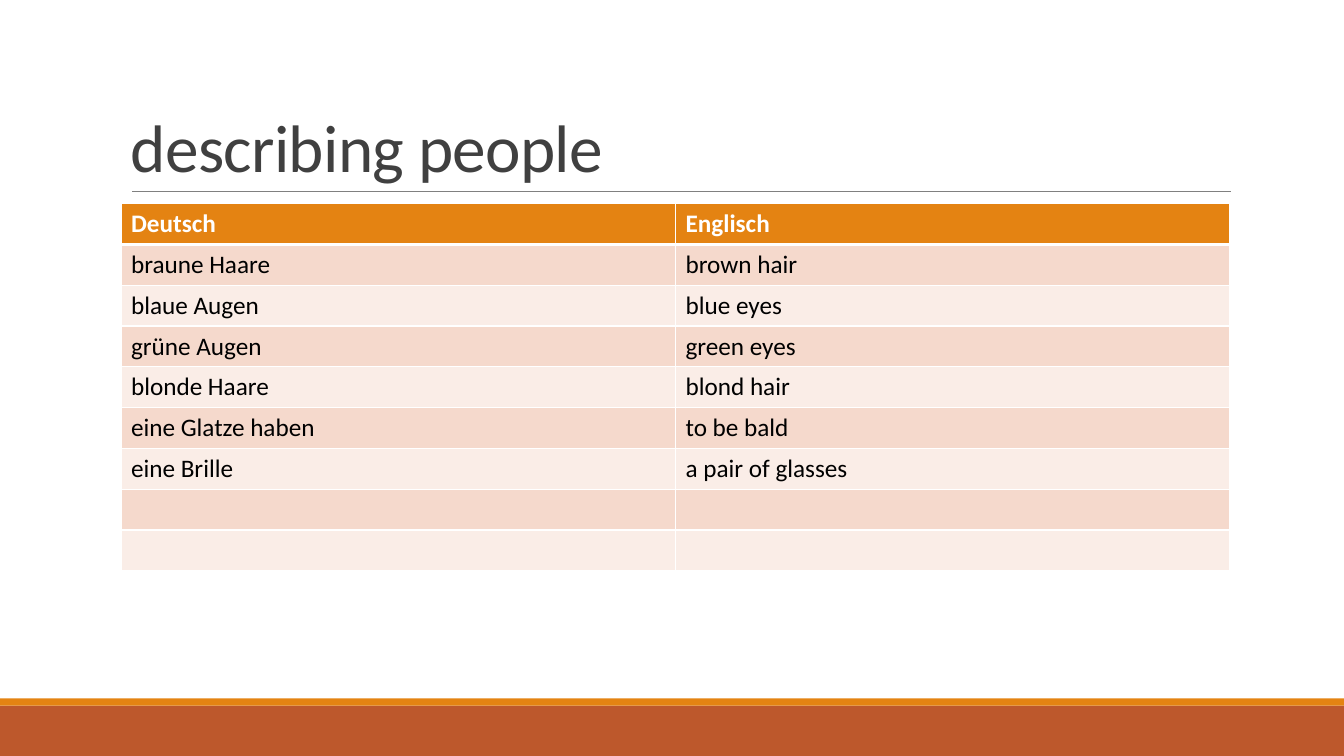
from lxml import etree
from pptx import Presentation
from pptx.dml.color import RGBColor
from pptx.enum.shapes import MSO_CONNECTOR, MSO_SHAPE
from pptx.enum.text import MSO_ANCHOR
from pptx.oxml.ns import qn
from pptx.util import Inches, Pt

RECTANGLE = MSO_SHAPE.RECTANGLE
STRAIGHT = MSO_CONNECTOR.STRAIGHT
BOTTOM = MSO_ANCHOR.BOTTOM

WHITE = RGBColor(0xFF, 0xFF, 0xFF)
BLACK = RGBColor(0x00, 0x00, 0x00)
DARK_GRAY = RGBColor(0x40, 0x40, 0x40)
GRAY = RGBColor(0x80, 0x80, 0x80)
ORANGE = RGBColor(0xE4, 0x83, 0x12)
RUST = RGBColor(0xBD, 0x58, 0x2C)
BAND_FILLS = [RGBColor(0xF5, 0xD9, 0xCC), RGBColor(0xFA, 0xED, 0xE7)]

FONT = "Calibri"
SLIDE_WIDTH = 13.33
ROW_HEIGHT = 0.405
COLUMN_WIDTH = 5.5

VOCABULARY = [
    ("Deutsch", "Englisch"),
    ("braune Haare", "brown hair"),
    ("blaue Augen", "blue eyes"),
    ("grüne Augen", "green eyes"),
    ("blonde Haare", "blond hair"),
    ("eine Glatze haben", "to be bald"),
    ("eine Brille", "a pair of glasses"),
    ("", ""),
    ("", ""),
]


def write_text(text_frame, text, size=18, color=BLACK, bold=False,
               line_spacing=None, letter_spacing=None):
    paragraph = text_frame.paragraphs[0]
    if line_spacing:
        paragraph.line_spacing = line_spacing
    run = paragraph.add_run()
    run.text = text
    run.font.name = FONT
    run.font.size = Pt(size)
    run.font.bold = bold
    run.font.color.rgb = color
    if letter_spacing:
        run.font._element.set("spc", str(round(letter_spacing * 100)))


def add_band(slide, top, height, color):
    band = slide.shapes.add_shape(
        RECTANGLE, 0, Inches(top), Inches(SLIDE_WIDTH), Inches(height))
    band.shadow.inherit = False
    band.fill.solid()
    band.fill.fore_color.rgb = color
    band.line.fill.background()


def add_rule(slide, left, right, y):
    rule = slide.shapes.add_connector(
        STRAIGHT, Inches(left), Inches(y), Inches(right), Inches(y))
    rule.line.color.rgb = GRAY
    rule.line.width = Pt(0.5)
    etree.SubElement(rule._element.spPr, qn("a:effectLst"))


def add_title(slide, text):
    title = slide.shapes.add_textbox(
        Inches(1.2), Inches(0.31), Inches(11), Inches(1.59))
    title.text_frame.word_wrap = True
    title.text_frame.vertical_anchor = BOTTOM
    write_text(title.text_frame, text, size=48, color=DARK_GRAY,
               line_spacing=0.85, letter_spacing=-0.5)


def set_borders(cell, top=1, bottom=1):
    properties = cell._tc.get_or_add_tcPr()
    widths = {"a:lnL": 1, "a:lnR": 1, "a:lnT": top, "a:lnB": bottom}
    # Borders come before the fill in the cell properties
    for index, (tag, width) in enumerate(widths.items()):
        border = etree.Element(qn(tag), w=str(Pt(width)))
        fill = etree.SubElement(border, qn("a:solidFill"))
        etree.SubElement(fill, qn("a:srgbClr"), val=str(WHITE))
        properties.insert(index, border)


def add_vocabulary_table(slide, rows):
    column_count = len(rows[0])
    table = slide.shapes.add_table(
        len(rows), column_count, Inches(1.2), Inches(2.02),
        Inches(COLUMN_WIDTH * column_count),
        Inches(ROW_HEIGHT * len(rows))).table
    for row_index, words in enumerate(rows):
        is_header = row_index == 0
        for column_index, word in enumerate(words):
            cell = table.cell(row_index, column_index)
            cell.fill.solid()
            cell.fill.fore_color.rgb = (
                ORANGE if is_header else BAND_FILLS[(row_index - 1) % 2])
            set_borders(cell, top=3 if row_index == 1 else 1,
                        bottom=3 if is_header else 1)
            if word:
                write_text(cell.text_frame, word, bold=is_header,
                           color=WHITE if is_header else BLACK)


def main():
    presentation = Presentation()
    presentation.slide_width = Inches(SLIDE_WIDTH)
    presentation.slide_height = Inches(7.5)
    slide = presentation.slides.add_slide(presentation.slide_layouts[6])

    # Footer bands
    add_band(slide, 7, 0.5, RUST)
    add_band(slide, 6.93, 0.07, ORANGE)

    # Title with rule
    add_rule(slide, 1.31, 12.21, 1.9)
    add_title(slide, "describing people")

    # Vocabulary
    add_vocabulary_table(slide, VOCABULARY)

    presentation.save("out.pptx")


if __name__ == "__main__":
    main()
